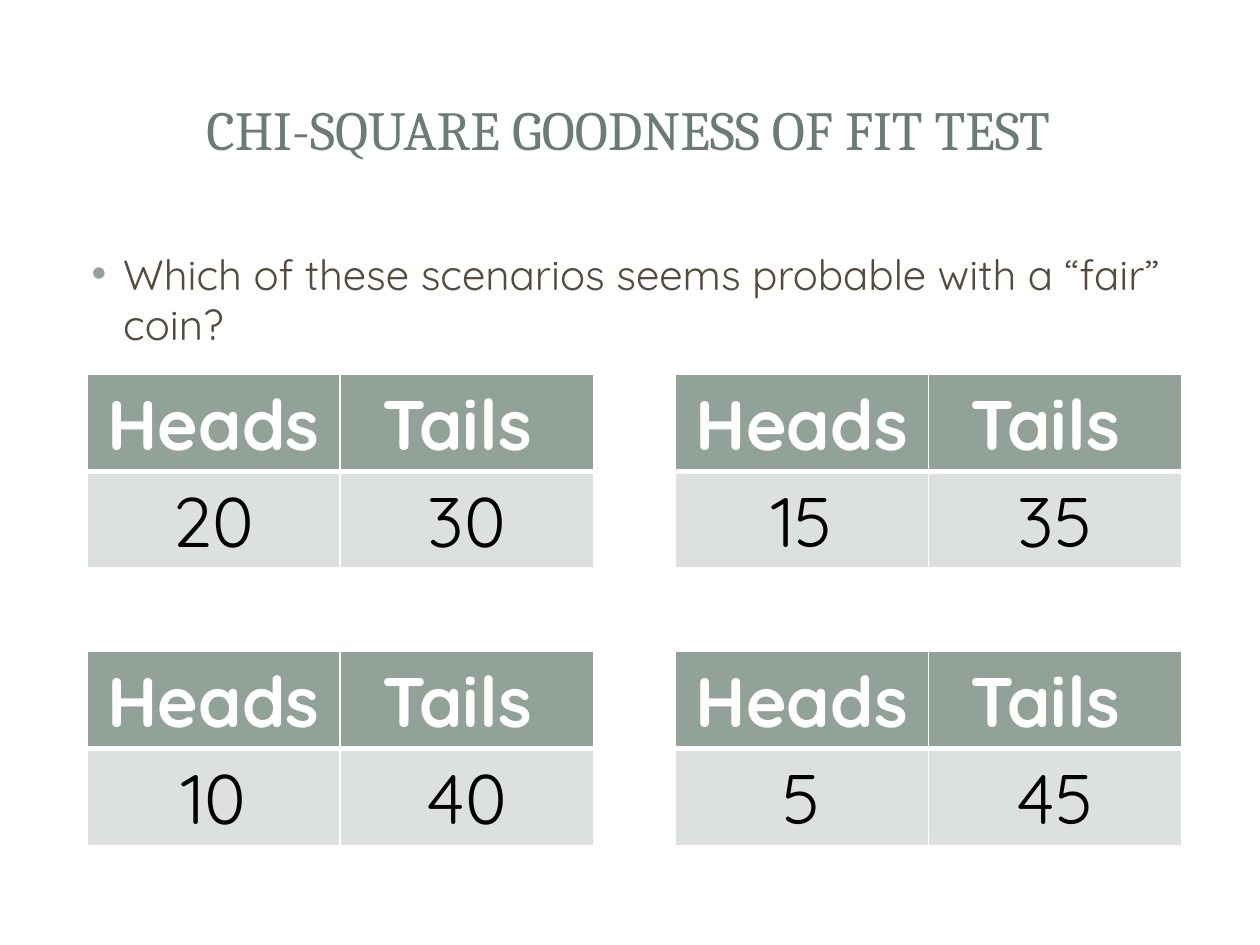
from lxml.etree import SubElement
from pptx import Presentation
from pptx.dml.color import RGBColor as RGB
from pptx.enum.text import MSO_ANCHOR as Anchor, PP_ALIGN as Align
from pptx.oxml.ns import qn
from pptx.util import Inches, Pt

W, H = Inches(10), Inches(7.5)
COLORS = {
    "title": "6B7D72",
    "body": "564B3C",
    "accent": "93A299",
    "pale": "DCE0DE",
    "white": "FFFFFF",
    "black": "000000",
}
SERIF, SANS = "Cambria", "Quicksand"

# Grid of coin tables
LEFT, TOP = Inches(0.69), Inches(2.97)
STEP_X, STEP_Y = Inches(4.67), Inches(2.2)
COL_W, ROW_H = Inches(2.01), Inches(0.77)
HEADER = ("Heads", "Tails ")
SCENARIOS = [[("20", "30"), ("15", "35")],
             [("10", "40"), ("5", "45")]]


def color(name):
    return RGB.from_string(COLORS[name])


def add_run(p, text, font, size, name, bold=False):
    r = p.add_run()
    r.text = text
    r.font.name, r.font.size, r.font.bold = font, Pt(size), bold
    r.font.color.rgb = color(name)


def add_box(slide, x, y, w, h, anchor):
    """Add a wrapped text box placed by shares of the slide; return its first paragraph."""
    sp = slide.shapes.add_textbox(int(W * x), int(H * y), int(W * w), int(H * h))
    tf = sp.text_frame
    tf.word_wrap, tf.vertical_anchor = True, anchor
    return tf.paragraphs[0]


def set_bullet(p):
    pPr = p._p.get_or_add_pPr()
    pPr.set("marL", str(Inches(0.38)))
    pPr.set("indent", str(Inches(-0.25)))
    clr = SubElement(pPr, qn("a:buClr"))
    SubElement(clr, qn("a:srgbClr"), val=COLORS["accent"])
    SubElement(pPr, qn("a:buFont"), typeface="Arial")
    SubElement(pPr, qn("a:buChar"), char="•")


def set_borders(cell, top, bottom):
    tcPr = cell._tc.get_or_add_tcPr()
    for side, width in zip("LRTB", (1, 1, top, bottom)):
        ln = SubElement(tcPr, qn(f"a:ln{side}"), w=str(Pt(width)))
        fill = SubElement(ln, qn("a:solidFill"))
        SubElement(fill, qn("a:srgbClr"), val=COLORS["white"])


def add_coin_table(slide, x, y, counts):
    rows = (HEADER, counts)
    table = slide.shapes.add_table(2, 2, x, y, 2 * COL_W, 2 * ROW_H).table
    for col in table.columns:
        col.width = COL_W
    for i, texts in enumerate(rows):
        head = i == 0
        for j, text in enumerate(texts):
            cell = table.cell(i, j)
            set_borders(cell, *((1, 3) if head else (3, 1)))
            cell.fill.solid()
            cell.fill.fore_color.rgb = color("accent" if head else "pale")
            cell.vertical_anchor = Anchor.MIDDLE
            p = cell.text_frame.paragraphs[0]
            p.alignment = Align.CENTER
            add_run(p, text, SANS, 40, "white" if head else "black", head)


def main():
    prs = Presentation()
    prs.slide_width, prs.slide_height = W, H
    slide = prs.slides.add_slide(prs.slide_layouts[6])

    # Title
    p = add_box(slide, 0.047, 0.06, 0.903, 0.152, Anchor.MIDDLE)
    p.alignment = Align.CENTER
    add_run(p, "CHI-SQUARE GOODNESS OF FIT TEST", SERIF, 31.5, "title")

    # Four scenarios
    for i, row in enumerate(SCENARIOS):
        for j, counts in enumerate(row):
            add_coin_table(slide, LEFT + j * STEP_X, TOP + i * STEP_Y, counts)

    # Question
    p = add_box(slide, 0.05, 0.256, 0.9, 0.637, Anchor.TOP)
    set_bullet(p)
    add_run(p, "Which of these scenarios seems probable with a “fair” coin?",
            SANS, 24, "body")

    prs.save("out.pptx")


if __name__ == "__main__":
    main()
